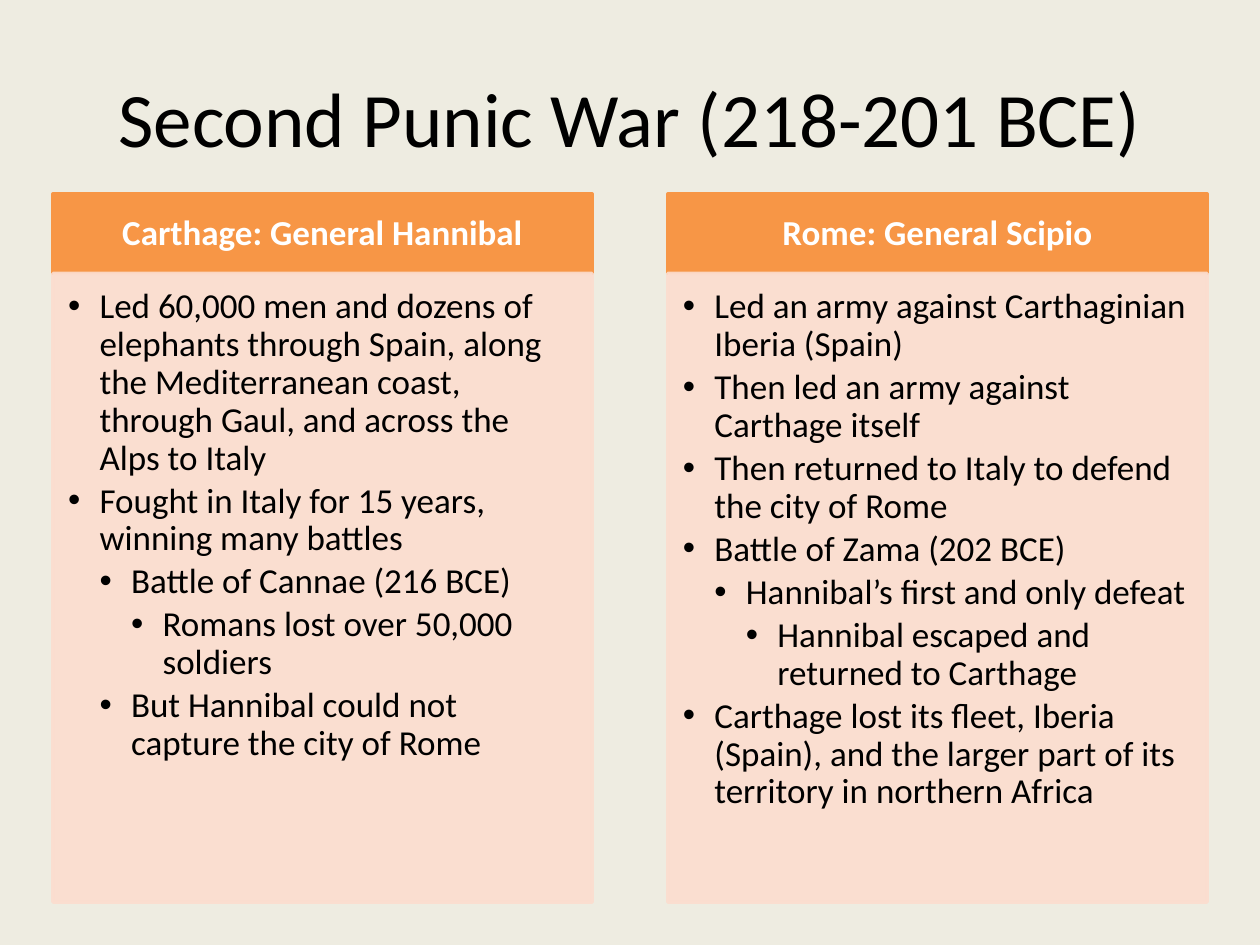
from lxml.etree import SubElement
from pptx import Presentation
from pptx.dml.color import RGBColor as Color
from pptx.enum.text import MSO_ANCHOR as Anchor, MSO_AUTO_SIZE as AutoSize, PP_ALIGN as Align
from pptx.oxml.ns import qn
from pptx.util import Inches, Pt

colors = {"page": "EEECE1", "header": "F79646", "panel": "FCDDCF", "light": "FFFFFF", "dark": "000000"}
columns = [
    ("Carthage: General Hannibal", [
        (0, "Led 60,000 men and dozens of elephants through Spain, along the Mediterranean coast, through Gaul, and across the Alps to Italy"),
        (0, "Fought in Italy for 15 years, winning many battles"),
        (1, "Battle of Cannae (216 BCE)"),
        (2, "Romans lost over 50,000 soldiers"),
        (1, "But Hannibal could not capture the city of Rome"),
    ]),
    ("Rome: General Scipio", [
        (0, "Led an army against Carthaginian Iberia (Spain)"),
        (0, "Then led an army against Carthage itself"),
        (0, "Then returned to Italy to defend the city of Rome"),
        (0, "Battle of Zama (202 BCE)"),
        (1, "Hannibal’s first and only defeat"),
        (2, "Hannibal escaped and returned to Carthage"),
        (0, "Carthage lost its fleet, Iberia (Spain), and the larger part of its territory in northern Africa"),
    ]),
]
left, top, column_width, column_step = 0.42, 1.54, 4.28, 4.88
header_height, panel_height = 0.63, 4.99
indent = 0.25


def format_box(box, place, color, margins, anchor, opacity=100):
    box.left, box.top, box.width, box.height = map(Inches, place)
    box.fill.solid()
    box.line.width = Pt(2)
    for paint in (box.fill, box.line.fill):
        paint.solid()
        paint.fore_color.rgb = Color.from_string(colors[color])
    if opacity < 100:
        for tone in box.fill._xPr.iter(qn("a:srgbClr")):
            SubElement(tone, qn("a:alpha"), val=str(opacity * 1000))
    frame = box.text_frame
    frame.word_wrap = True
    frame.auto_size = AutoSize.NONE
    frame.vertical_anchor = anchor
    frame.margin_left, frame.margin_top, frame.margin_right, frame.margin_bottom = map(Inches, margins)
    return frame


def format_para(para, text, size, color, bold=False):
    para.text = text
    para.font.name = "Calibri"
    para.font.size = Pt(size)
    para.font.bold = bold
    para.font.color.rgb = Color.from_string(colors[color])


deck = Presentation()
deck.slide_width, deck.slide_height = Inches(10), Inches(7.5)
page = deck.slides.add_slide(deck.slide_layouts.get_by_name("Comparison"))
page.background.fill.solid()
page.background.fill.fore_color.rgb = Color.from_string(colors["page"])

title = page.shapes.title
title.left, title.top, title.width, title.height = map(Inches, (0.5, 0.3, 9, 1.25))
title.text_frame.vertical_anchor = Anchor.MIDDLE
title.text_frame.paragraphs[0].alignment = Align.CENTER
format_para(title.text_frame.paragraphs[0], "Second Punic War (218-201 BCE)", 44, "dark")

for number, (heading, points) in enumerate(columns):
    x = left + number * column_step
    header = page.placeholders[1 + 2 * number]
    frame = format_box(header, (x, top, column_width, header_height), "header",
                       (0.16, 0.09, 0.16, 0.09), Anchor.MIDDLE)
    para = frame.paragraphs[0]
    para.alignment = Align.CENTER
    para.line_spacing = 0.9
    para.space_before = Pt(0)
    format_para(para, heading, 20, "light", bold=True)

    panel = page.placeholders[2 + 2 * number]
    frame = format_box(panel, (x, top + header_height, column_width, panel_height), "panel",
                       (0.12, 0.12, 0.16, 0.17), Anchor.TOP, opacity=90)
    for row, (level, text) in enumerate(points):
        para = frame.add_paragraph() if row else frame.paragraphs[0]
        para.level = level
        para.line_spacing = 0.9
        para.space_before = Pt(0)
        para.space_after = Pt(3)
        properties = para._p.get_or_add_pPr()
        properties.set("marL", str(Inches(indent * (level + 1))))
        properties.set("indent", str(-Inches(indent)))
        SubElement(properties, qn("a:buFont"), typeface="Arial")
        SubElement(properties, qn("a:buChar"), char="•")
        format_para(para, text, 20, "dark")

deck.save("out.pptx")
